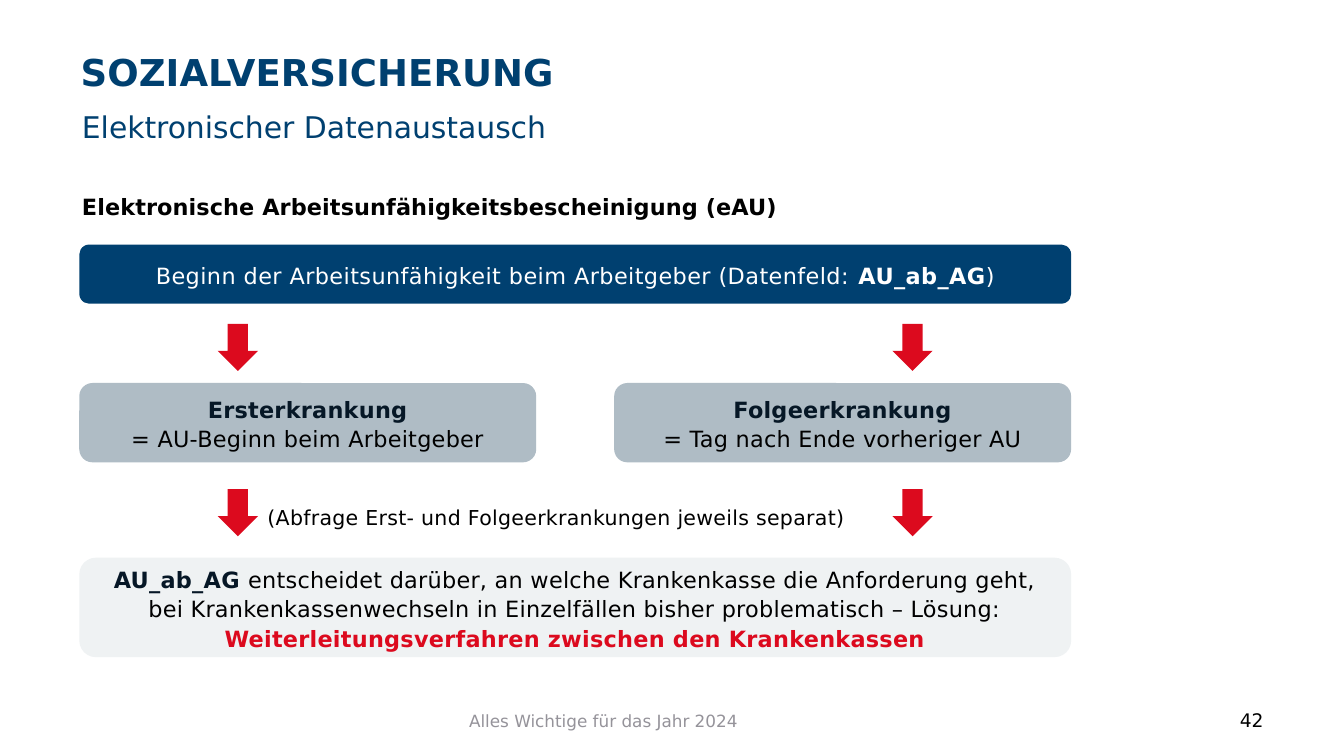
from lxml import etree
from pptx import Presentation
from pptx import util as u
from pptx.dml.color import RGBColor
from pptx.enum import shapes, text
from pptx.oxml import ns

COLORS = {"navy": "004070", "red": "DC0A1E", "slate": "AFBCC5", "mist": "EFF2F3",
          "ink": "061726", "black": "000000", "white": "FFFFFF", "gray": "95939A"}
FONT = "DejaVu Sans"
LEFT, WIDTH = 0.59, 7.38
CARD_WIDTH, ARROW_WIDTH, ARROW_HEIGHT = 3.4, 0.3, 0.35
ARROW_LEFTS = (1.62, 6.64)
CENTER = text.PP_ALIGN.CENTER
TOP, MIDDLE = text.MSO_ANCHOR.TOP, text.MSO_ANCHOR.MIDDLE


def color(name):
    return RGBColor.from_string(COLORS[name])


def place(shape, box):
    for name, value in zip(("left", "top", "width", "height"), box):
        setattr(shape, name, u.Inches(value))


def write(shape, paragraphs, size, spacing=0, align=text.PP_ALIGN.LEFT,
          anchor=MIDDLE, line=1.0, inset=(0.1, 0.05)):
    """Fill a shape with paragraphs, each a list of (words, color, bold) spans."""
    frame = shape.text_frame
    side, edge = map(u.Inches, inset)
    frame_format = {"word_wrap": True, "auto_size": text.MSO_AUTO_SIZE.NONE,
                    "vertical_anchor": anchor, "margin_left": side,
                    "margin_right": side, "margin_top": edge, "margin_bottom": edge}
    for name, value in frame_format.items():
        setattr(frame, name, value)
    para_format = {"alignment": align, "line_spacing": line,
                   "space_before": u.Pt(0), "space_after": u.Pt(0)}
    for number, spans in enumerate(paragraphs):
        para = frame.add_paragraph() if number else frame.paragraphs[0]
        for name, value in para_format.items():
            setattr(para, name, value)
        for words, ink, bold in spans:
            for part, piece in enumerate(words.split("\n")):
                if part:
                    para.add_line_break()
                span = para.add_run()
                span.text = piece
                for name, value in {"name": FONT, "size": u.Pt(size), "bold": bold}.items():
                    setattr(span.font, name, value)
                span.font.color.rgb = color(ink)
                if spacing:
                    span.font._element.set("spc", str(round(spacing * 100)))


def write_placeholder(shape, box, paragraphs, size, **style):
    """Move a placeholder and fill it with paragraphs that have no bullets."""
    place(shape, box)
    write(shape, paragraphs, size, anchor=TOP, **style)
    for para in shape.text_frame.paragraphs:
        properties = para._p.get_or_add_pPr()
        properties.set("marL", "0")
        properties.set("indent", "0")
        etree.SubElement(properties, ns.qn("a:buNone"))


def add_label(page, box, words, ink, size, **style):
    label = page.shapes.add_textbox(0, 0, 0, 0)
    place(label, box)
    write(label, [[(words, ink, False)]], size, **style)


def add_block(page, kind, box, fill):
    block = page.shapes.add_shape(kind, 0, 0, 0, 0)
    place(block, box)
    block.shadow.inherit = False
    block.fill.solid()
    block.fill.fore_color.rgb = color(fill)
    block.line.fill.background()
    return block


def add_panel(page, box, fill, paragraphs, **style):
    panel = add_block(page, shapes.MSO_SHAPE.ROUNDED_RECTANGLE, box, fill)
    write(panel, paragraphs, 12, align=CENTER, **style)


def add_arrows(page, top):
    for left in ARROW_LEFTS:
        add_block(page, shapes.MSO_SHAPE.DOWN_ARROW,
                  (left, top, ARROW_WIDTH, ARROW_HEIGHT), "red")


def fill_placeholders(page):
    """Write the title, the subtitle and the body with its heading and side note."""
    title, body, subtitle = page.placeholders
    write_placeholder(title, (0.5, 0.32, 8.11, 0.44),
                      [[("SOZIALVERSICHERUNG", "navy", True)]], 19.8, spacing=0.07)
    write_placeholder(subtitle, (0.51, 0.76, 8.11, 0.28),
                      [[("Elektronischer Datenaustausch", "navy", False)]], 16)
    write_placeholder(body, (0.51, 1.4, 8.11, 3.61), [
        [("Elektronische Arbeitsunfähigkeitsbescheinigung (eAU)", "black", True)],
        [("(Abfrage Erst- und Folgeerkrankungen jeweils separat)", "black", False)]],
        12, spacing=0.07, inset=(0.1, 0.04))
    note = body.text_frame.paragraphs[1]
    note.space_before, note.line_spacing = u.Pt(149), u.Pt(16.5)
    note._p.pPr.set("marL", str(u.Inches(1.38)))
    note.runs[0].font.size = u.Pt(11)
    note.runs[0].font._element.set("spc", "13")


def add_flow(page):
    """Place the start bar, the two cases and the conclusion, top to bottom."""
    add_panel(page, (LEFT, 1.82, WIDTH, 0.44), "navy", [[
        ("Beginn der Arbeitsunfähigkeit beim Arbeitgeber (Datenfeld: ", "white", False),
        ("AU_ab_AG", "white", True), (")", "white", False)]], spacing=0.23, line=1.1)
    add_arrows(page, 2.41)
    cases = (("Ersterkrankung", "= AU-Beginn beim Arbeitgeber"),
             ("Folgeerkrankung", "= Tag nach Ende vorheriger AU"))
    for number, (name, meaning) in enumerate(cases):
        left = LEFT + number * (WIDTH - CARD_WIDTH)
        add_panel(page, (left, 2.85, CARD_WIDTH, 0.59), "slate",
                  [[(name, "ink", True)], [(meaning, "black", False)]],
                  spacing=0.13, line=u.Pt(15.8), inset=(0.03, 0.05))
    add_arrows(page, 3.64)
    add_panel(page, (LEFT, 4.15, WIDTH, 0.74), "mist", [[
        ("AU_ab_AG ", "ink", True),
        ("entscheidet darüber, an welche Krankenkasse die Anforderung geht,\n"
         "bei Krankenkassenwechseln in Einzelfällen bisher problematisch – Lösung: ",
         "black", False),
        ("Weiterleitungsverfahren zwischen den Krankenkassen", "red", True)]],
        spacing=0.13, line=u.Pt(15.8))


def add_footer(page):
    add_label(page, (3.42, 5.21, 3.17, 0.3), "Alles Wichtige für das Jahr 2024",
              "gray", 9, inset=(0.07, 0.04))
    add_label(page, (7.17, 5.21, 2.33, 0.3), "42", "black", 10, align=text.PP_ALIGN.RIGHT)


def main():
    deck = Presentation()
    deck.slide_width = u.Inches(10)
    deck.slide_height = deck.slide_width * 9 // 16
    page = deck.slides.add_slide(deck.slide_layouts.get_by_name("Two Content"))
    fill_placeholders(page)
    add_flow(page)
    add_footer(page)
    deck.save("out.pptx")


if __name__ == "__main__":
    main()
